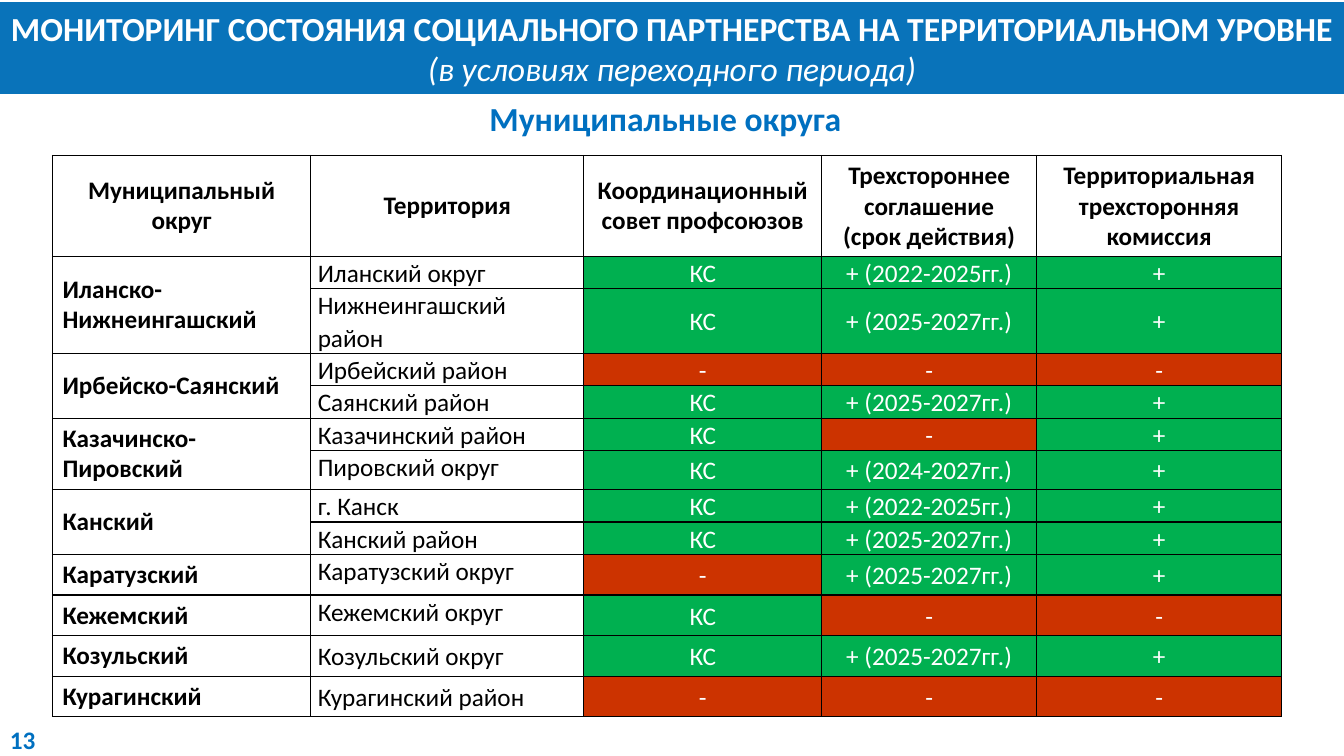
import pptx
import pptx.dml.color
import pptx.enum.shapes
import pptx.enum.text
import pptx.oxml
import pptx.oxml.ns
import pptx.util

Pt = pptx.util.Pt
RGBColor = pptx.dml.color.RGBColor
ALIGN = pptx.enum.text.PP_ALIGN
ANCHOR = pptx.enum.text.MSO_ANCHOR

BLACK = RGBColor(0x00, 0x00, 0x00)
WHITE = RGBColor(0xFF, 0xFF, 0xFF)
BLUE = RGBColor(0x00, 0x70, 0xC0)
BANNER_BLUE = RGBColor(0x09, 0x73, 0xBA)
GREEN = RGBColor(0x00, 0xB0, 0x50)
RED = RGBColor(0xCC, 0x33, 0x00)

FONT = "Calibri"
COLUMN_WIDTHS = [184.5, 195, 170, 153.5, 175]
ROW_HEIGHTS = [72, 23, 46, 23, 23, 23, 28, 23, 23, 29, 29, 29, 29]
HEADERS = [
    "Муниципальный округ",
    "Территория",
    "Координационный совет профсоюзов",
    "Трехстороннее соглашение\v(срок действия)",
    "Территориальная трехсторонняя комиссия",
]
DISTRICTS = [
    ("Иланско-Нижнеингашский", [
        ("Иланский округ", "КС", "+ (2022-2025гг.)", "+"),
        ("Нижнеингашский район", "КС", "+ (2025-2027гг.)", "+")]),
    ("Ирбейско-Саянский", [
        ("Ирбейский район", "-", "-", "-"),
        ("Саянский район", "КС", "+ (2025-2027гг.)", "+")]),
    ("Казачинско-Пировский", [
        ("Казачинский район", "КС", "-", "+"),
        ("Пировский округ", "КС", "+ (2024-2027гг.)", "+")]),
    ("Канский", [
        ("г. Канск", "КС", "+ (2022-2025гг.)", "+"),
        ("Канский район", "КС", "+ (2025-2027гг.)", "+")]),
    ("Каратузский", [("Каратузский округ", "-", "+ (2025-2027гг.)", "+")]),
    ("Кежемский", [("Кежемский округ", "КС", "-", "-")]),
    ("Козульский", [("Козульский округ", "КС", "+ (2025-2027гг.)", "+")]),
    ("Курагинский", [("Курагинский район", "-", "-", "-")]),
]
MIDDLE_TERRITORIES = {"Козульский округ", "Курагинский район"}


def set_font(font, size, color, bold=False):
    """Apply the slide typeface with a size, colour and weight."""
    font.name = FONT
    font.size = Pt(size)
    font.bold = bold
    font.color.rgb = color


def add_label(s, text, left, top, width, height, size, wrap=True):
    """Add a bold blue text box."""
    tf = s.shapes.add_textbox(Pt(left), Pt(top), Pt(width), Pt(height)).text_frame
    tf.word_wrap = wrap
    tf.auto_size = pptx.enum.text.MSO_AUTO_SIZE.SHAPE_TO_FIT_TEXT
    p = tf.paragraphs[0]
    p.text = text
    set_font(p.font, size, BLUE, bold=True)


def add_banner(s, title, note):
    """Add the title band across the top of the slide."""
    sp = s.shapes.add_shape(pptx.enum.shapes.MSO_SHAPE.RECTANGLE,
                            0, Pt(1.5), Pt(960), Pt(65.5))
    sp.shadow.inherit = False
    sp.fill.solid()
    sp.fill.fore_color.rgb = BANNER_BLUE
    sp.line.fill.background()
    tf = sp.text_frame
    tf.word_wrap = True
    tf.auto_size = pptx.enum.text.MSO_AUTO_SIZE.SHAPE_TO_FIT_TEXT
    p = tf.paragraphs[0]
    p.alignment = ALIGN.CENTER
    for text, is_note in ((title + " ", False), (note, True)):
        r = p.add_run()
        r.text = text
        set_font(r.font, 24, WHITE, bold=not is_note)
        r.font.italic = is_note


def format_cell(cell):
    """Give a cell thin black borders and no fill."""
    tc_pr = cell._tc.get_or_add_tcPr()
    for side in ("lnL", "lnR", "lnT", "lnB"):
        tc_pr.append(pptx.oxml.parse_xml(
            f'<a:{side} {pptx.oxml.ns.nsdecls("a")} w="12700"><a:solidFill>'
            f'<a:srgbClr val="{BLACK}"/></a:solidFill></a:{side}>'))
    cell.fill.background()


def write_cell(cell, text, color=BLACK, bold=False, align=ALIGN.LEFT, anchor=ANCHOR.MIDDLE):
    """Write the text of a table cell."""
    cell.vertical_anchor = anchor
    p = cell.text_frame.paragraphs[0]
    p.text = text
    p.alignment = align
    set_font(p.font, 18, color, bold)


def write_entry(cell, text, **style):
    """Write a compact body cell."""
    cell.margin_left = cell.margin_right = Pt(5)
    cell.margin_top = cell.margin_bottom = 0
    write_cell(cell, text, **style)
    p = cell.text_frame.paragraphs[0]
    p.line_spacing = 1.07
    p.space_after = Pt(8)


def write_status(cell, text):
    """Write a status on green, or on red when it is missing."""
    write_entry(cell, text, color=WHITE, align=ALIGN.CENTER)
    cell.fill.solid()
    cell.fill.fore_color.rgb = RED if text == "-" else GREEN


def add_districts_table(s):
    """Add the table of districts and their territories."""
    table = s.shapes.add_table(len(ROW_HEIGHTS), len(COLUMN_WIDTHS), Pt(37.5), Pt(111),
                               Pt(sum(COLUMN_WIDTHS)), Pt(sum(ROW_HEIGHTS))).table
    table.horz_banding = False
    for column, width in zip(table.columns, COLUMN_WIDTHS):
        column.width = Pt(width)
    for row, height in zip(table.rows, ROW_HEIGHTS):
        row.height = Pt(height)
    for cell in table.iter_cells():
        format_cell(cell)
    for col, header in enumerate(HEADERS):
        write_cell(table.cell(0, col), header, bold=True, align=ALIGN.CENTER)
    row = 1
    for district, territories in DISTRICTS:
        if len(territories) > 1:
            table.cell(row, 0).merge(table.cell(row + len(territories) - 1, 0))
        write_cell(table.cell(row, 0), district, bold=True)
        for territory, *statuses in territories:
            anchor = ANCHOR.MIDDLE if territory in MIDDLE_TERRITORIES else ANCHOR.TOP
            write_entry(table.cell(row, 1), territory, anchor=anchor)
            for col, status in enumerate(statuses, 2):
                write_status(table.cell(row, col), status)
            row += 1


def main():
    """Build the slide and save it."""
    prs = pptx.Presentation()
    prs.slide_width = Pt(960)
    prs.slide_height = Pt(540)
    s = prs.slides.add_slide(prs.slide_layouts[6])
    add_label(s, "13", 0, 513.5, 37.5, 29, 18)
    add_districts_table(s)
    add_label(s, "Муниципальные округа", 342.5, 66.5, 274.5, 36, 24, wrap=False)
    add_banner(s, "МОНИТОРИНГ СОСТОЯНИЯ СОЦИАЛЬНОГО ПАРТНЕРСТВА НА ТЕРРИТОРИАЛЬНОМ УРОВНЕ",
               "(в условиях переходного периода)")
    prs.save("out.pptx")


if __name__ == "__main__":
    main()
